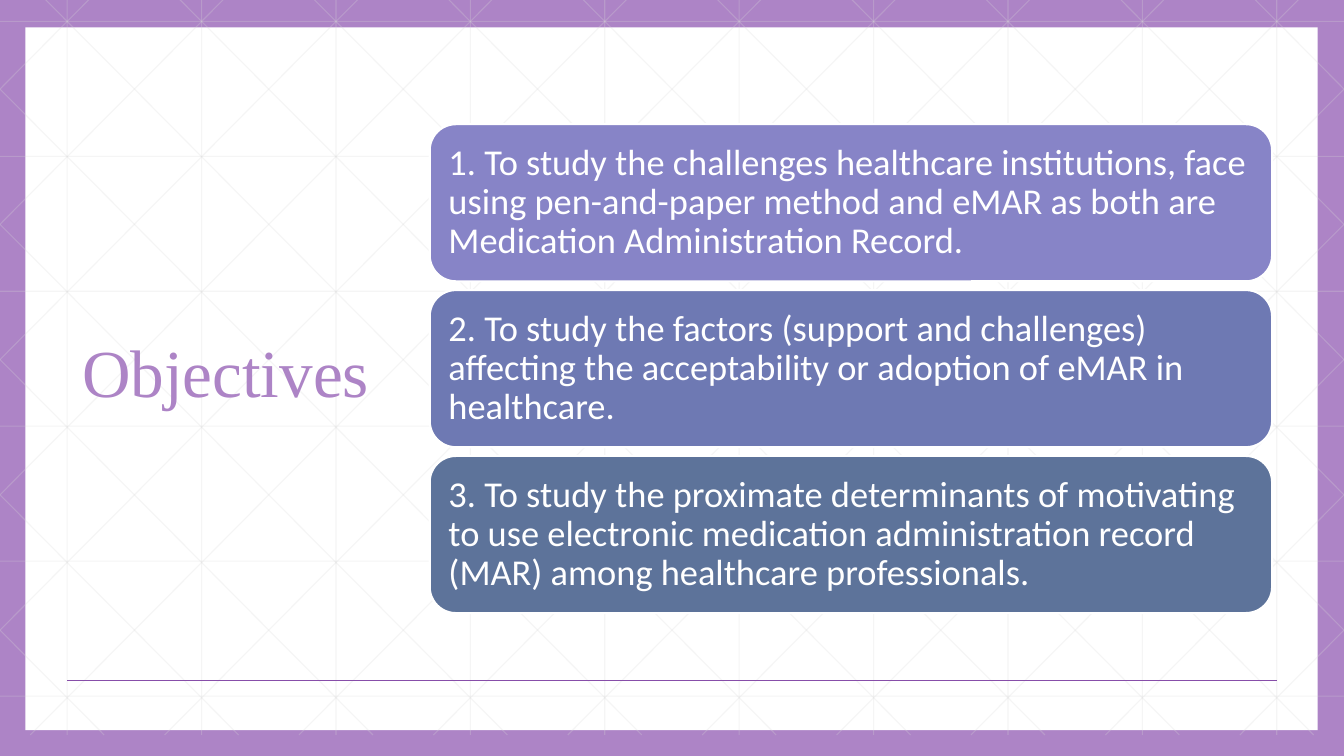
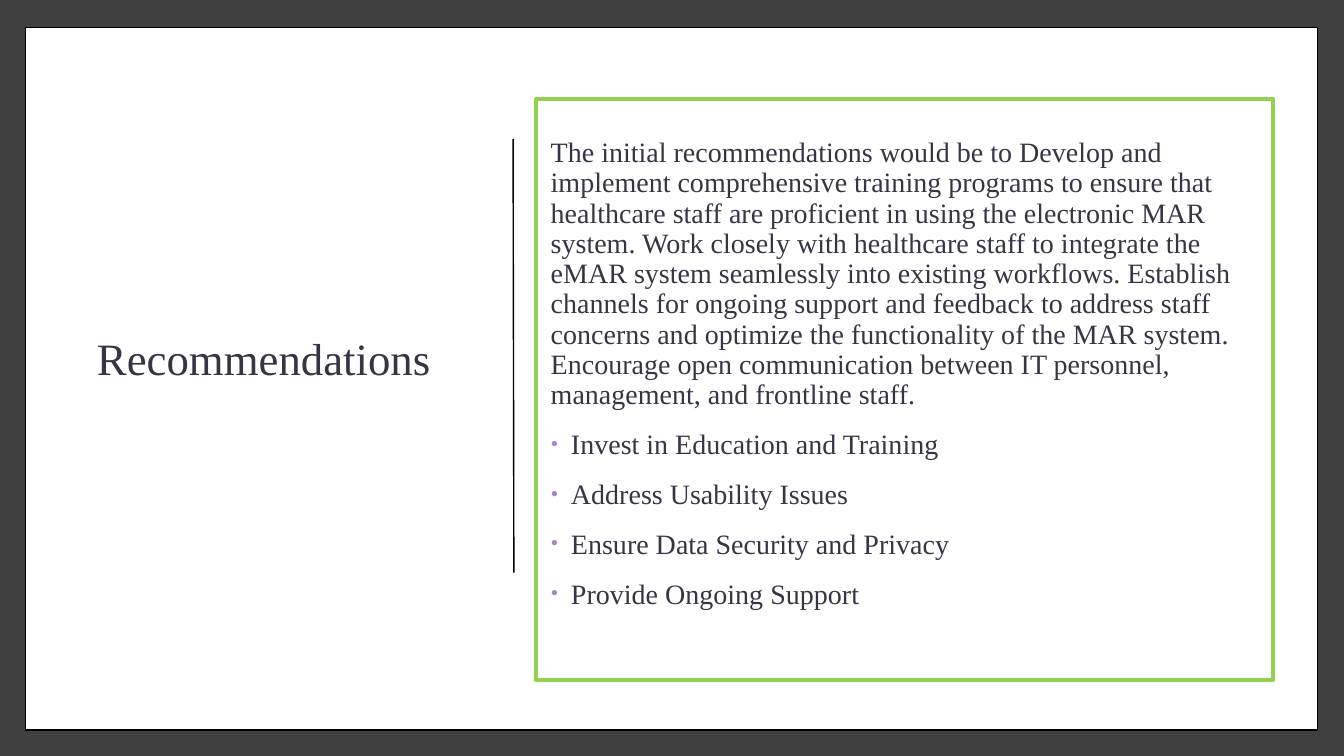
from dataclasses import dataclass

from lxml.etree import SubElement
from pptx import Presentation
from pptx.dml.color import RGBColor
from pptx.enum.shapes import MSO_CONNECTOR, MSO_SHAPE
from pptx.enum.text import MSO_ANCHOR, PP_ALIGN
from pptx.oxml.ns import qn
from pptx.shapes.autoshape import Shape
from pptx.shapes.connector import Connector
from pptx.slide import Slide
from pptx.text.text import TextFrame, _Paragraph
from pptx.util import Cm, Pt

# Lengths are in centimetres.
SLIDE_WIDTH, SLIDE_HEIGHT = 33.87, 19.05
SERIF, SANS = "Times New Roman", "Calibri"
WHITE, BLACK = "FFFFFF", "000000"
LILAC, PURPLE, INK = "AD84C6", "874EA9", "373545"
CHARCOAL, GREEN, GRID_GREY = "404040", "92D050", "D9D9D9"
LINE_SPACING = 0.9

GRID_STEP = SLIDE_WIDTH / 10
GRID_TOP, GRID_BOTTOM = -0.53, 18.52
GRID_SLOPE = 19.05 / 18.93


@dataclass(frozen=True)
class Box:
    left: float
    top: float
    width: float
    height: float


@dataclass(frozen=True)
class TextStyle:
    font: str
    size: float
    color: str
    highlight: str | None = None


@dataclass(frozen=True)
class Objective:
    text: str
    fill: str


FULL_SLIDE = Box(0, 0, SLIDE_WIDTH, SLIDE_HEIGHT)
PANEL = Box(0.64, 0.69, 32.57, 17.71)
FIRST_CARD = Box(10.83, 3.13, 21.23, 3.96)
CARD_PITCH = 4.18
CARD_STYLE = TextStyle(SANS, 26, WHITE)
BODY_STYLE = TextStyle(SERIF, 20, INK, WHITE)

OBJECTIVES = [
    Objective("1. To study the challenges healthcare institutions, face using "
              "pen-and-paper method and eMAR as both are Medication "
              "Administration Record.", "8784C7"),
    Objective("2. To study the factors (support and challenges) affecting the "
              "acceptability or adoption of eMAR in healthcare.", "6E79B3"),
    Objective("3. To study the proximate determinants of motivating to use "
              "electronic medication administration record (MAR) among "
              "healthcare professionals.", "5D739A"),
]

SUMMARY = (
    "The initial recommendations would be to Develop and implement "
    "comprehensive training programs to ensure that healthcare staff are "
    "proficient in using the electronic MAR system. Work closely with "
    "healthcare staff to integrate the eMAR system seamlessly into existing "
    "workflows. Establish channels for ongoing support and feedback to address "
    "staff concerns and optimize the functionality of the MAR system. Encourage "
    "open communication between IT personnel, management, and frontline staff."
)
ACTIONS = [
    "Invest in Education and Training",
    "Address Usability Issues",
    "Ensure Data Security and Privacy",
    "Provide Ongoing Support",
]


def rgb(value: str) -> RGBColor:
    return RGBColor.from_string(value)


def add_background(slide: Slide, color: str) -> None:
    fill = slide.background.fill
    fill.solid()
    fill.fore_color.rgb = rgb(color)


def add_box(slide: Slide, kind: MSO_SHAPE, box: Box, fill: str | None = None,
            line: str | None = None, line_width: float = 1) -> Shape:
    shape = slide.shapes.add_shape(
        kind, Cm(box.left), Cm(box.top), Cm(box.width), Cm(box.height))
    shape.shadow.inherit = False
    if fill:
        shape.fill.solid()
        shape.fill.fore_color.rgb = rgb(fill)
    else:
        shape.fill.background()
    if line:
        shape.line.color.rgb = rgb(line)
        shape.line.width = Pt(line_width)
    else:
        shape.line.fill.background()
    return shape


def add_line(slide: Slide, x1: float, y1: float, x2: float, y2: float,
             color: str, width: float = 1) -> Connector:
    line = slide.shapes.add_connector(
        MSO_CONNECTOR.STRAIGHT, Cm(x1), Cm(y1), Cm(x2), Cm(y2))
    line.line.color.rgb = rgb(color)
    line.line.width = Pt(width)
    SubElement(line._element.spPr, qn("a:effectLst"))
    return line


def add_grid_line(slide: Slide, x1: float, y1: float, x2: float, y2: float) -> None:
    line = add_line(slide, x1, y1, x2, y2, GRID_GREY, 0.79)
    tint = line._element.spPr.find(".//" + qn("a:srgbClr"))
    SubElement(tint, qn("a:alpha"), val="25000")


def add_grid(slide: Slide) -> None:
    """Draw squares and both sets of diagonals, cut off at the side edges."""
    for column in range(10):
        x = (column + 0.5) * GRID_STEP
        add_grid_line(slide, x, GRID_TOP, x, GRID_BOTTOM)
    for row in range(6):
        y = 0.54 + row * 3.4
        add_grid_line(slide, 0, y, SLIDE_WIDTH, y)
    for diagonal in range(-5, 10):
        origin = 0.63 + diagonal * GRID_STEP
        x1 = max(0, origin)
        x2 = min(SLIDE_WIDTH, origin + (GRID_BOTTOM - GRID_TOP) / GRID_SLOPE)
        y1, y2 = (GRID_TOP + (x - origin) * GRID_SLOPE for x in (x1, x2))
        add_grid_line(slide, x1, y1, x2, y2)
        add_grid_line(slide, SLIDE_WIDTH - x1, y1, SLIDE_WIDTH - x2, y2)


def move_to_layout(slide: Slide) -> None:
    """Hand the shapes drawn so far to the layout, so every slide shares them."""
    layout_tree = slide.slide_layout.shapes._spTree
    for shape in list(slide.shapes):
        layout_tree.append(shape._element)


def prepare_frame(frame: TextFrame) -> None:
    frame.word_wrap = True
    frame.vertical_anchor = MSO_ANCHOR.MIDDLE


def write(paragraph: _Paragraph, text: str, style: TextStyle,
          align: PP_ALIGN = PP_ALIGN.LEFT) -> None:
    paragraph.alignment = align
    paragraph.line_spacing = LINE_SPACING
    run = paragraph.add_run()
    run.text = text
    run.font.name = style.font
    run.font.size = Pt(style.size)
    run.font.color.rgb = rgb(style.color)
    if style.highlight:
        properties = run._r.get_or_add_rPr()
        highlight = SubElement(properties, qn("a:highlight"))
        SubElement(highlight, qn("a:srgbClr"), val=style.highlight)
        properties.find(qn("a:solidFill")).addnext(highlight)


def indent(paragraph: _Paragraph, left: float, first_line: float = 0) -> None:
    properties = paragraph._p.get_or_add_pPr()
    properties.set("marL", str(Cm(left)))
    properties.set("indent", str(Cm(first_line)))


def add_bullet(paragraph: _Paragraph) -> None:
    properties = paragraph._p.get_or_add_pPr()
    bullet_color = SubElement(properties, qn("a:buClr"))
    SubElement(bullet_color, qn("a:srgbClr"), val=LILAC)
    SubElement(properties, qn("a:buSzPct"), val="80000")
    SubElement(properties, qn("a:buFont"), typeface=SERIF)
    SubElement(properties, qn("a:buChar"), char="•")


def add_title(slide: Slide, text: str, box: Box, style: TextStyle,
              align: PP_ALIGN = PP_ALIGN.LEFT) -> None:
    title = slide.shapes.add_textbox(
        Cm(box.left), Cm(box.top), Cm(box.width), Cm(box.height))
    prepare_frame(title.text_frame)
    write(title.text_frame.paragraphs[0], text, style, align)


def add_card(slide: Slide, index: int, objective: Objective) -> None:
    box = Box(FIRST_CARD.left, FIRST_CARD.top + index * CARD_PITCH,
              FIRST_CARD.width, FIRST_CARD.height)
    card = add_box(slide, MSO_SHAPE.ROUNDED_RECTANGLE, box,
                   objective.fill, WHITE, 1.5)
    frame = card.text_frame
    prepare_frame(frame)
    frame.margin_left = frame.margin_right = Cm(0.28)
    frame.margin_top = frame.margin_bottom = Cm(0.28)
    write(frame.paragraphs[0], objective.text, CARD_STYLE)


def build_objectives(slide: Slide) -> None:
    add_background(slide, LILAC)
    add_line(slide, 1.69, 17.15, 32.17, 17.15, PURPLE)
    add_title(slide, "Objectives", Box(1.82, 1.68, 9.35, 15.57),
              TextStyle(SERIF, 48, LILAC))
    for index, objective in enumerate(OBJECTIVES):
        add_card(slide, index, objective)


def build_recommendations(slide: Slide) -> None:
    add_background(slide, WHITE)
    add_box(slide, MSO_SHAPE.RECTANGLE, FULL_SLIDE, CHARCOAL)
    add_box(slide, MSO_SHAPE.RECTANGLE, PANEL, WHITE, BLACK)
    add_title(slide, "Recommendations", Box(1.65, 1.78, 10, 14.63),
              TextStyle(SERIF, 32, INK), PP_ALIGN.CENTER)
    add_line(slide, 12.93, 3.5, 12.95, 14.43, BLACK)

    body = add_box(slide, MSO_SHAPE.RECTANGLE, Box(13.5, 2.5, 18.59, 14.63),
                   line=GREEN, line_width=3)
    frame = body.text_frame
    prepare_frame(frame)
    frame.margin_bottom = Cm(0.89)
    summary = frame.paragraphs[0]
    write(summary, SUMMARY, BODY_STYLE)
    summary.space_before = Pt(14)
    indent(summary, 0.13)
    for action in ACTIONS:
        item = frame.add_paragraph()
        write(item, action, BODY_STYLE)
        item.space_before = Pt(14)
        indent(item, 0.64, -0.51)
        add_bullet(item)


def main() -> None:
    deck = Presentation()
    deck.slide_width, deck.slide_height = Cm(SLIDE_WIDTH), Cm(SLIDE_HEIGHT)
    blank = deck.slide_layouts[6]
    objectives = deck.slides.add_slide(blank)
    add_box(objectives, MSO_SHAPE.RECTANGLE, PANEL, WHITE)
    add_grid(objectives)
    move_to_layout(objectives)
    build_objectives(objectives)
    build_recommendations(deck.slides.add_slide(blank))
    deck.save("out.pptx")


if __name__ == "__main__":
    main()
